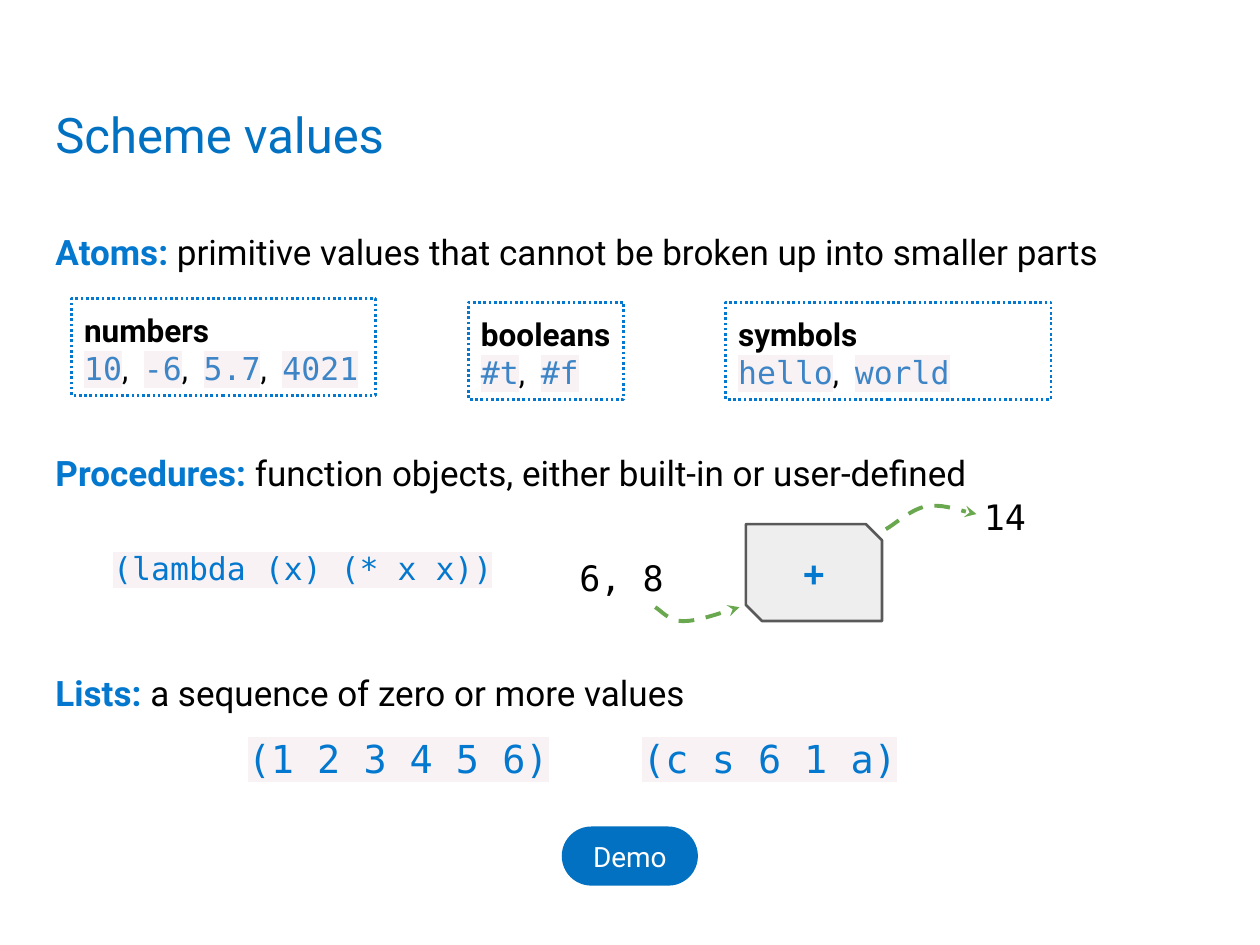
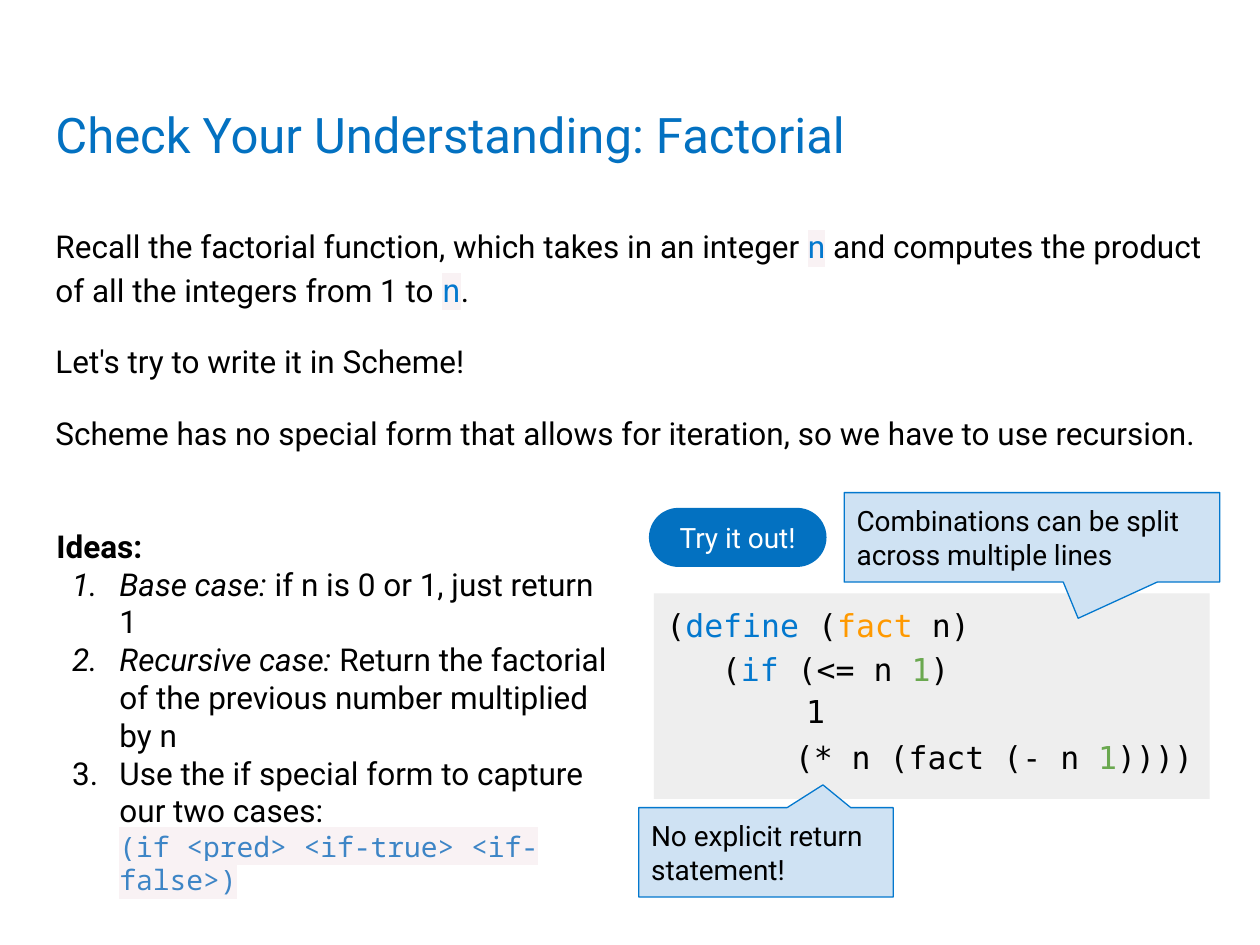
from dataclasses import dataclass, replace

from lxml import etree
from pptx import Presentation
from pptx.dml.color import RGBColor
from pptx.enum import dml, shapes, text
from pptx.oxml.ns import qn
from pptx.util import Pt

LEFT, CENTER = text.PP_ALIGN.LEFT, text.PP_ALIGN.CENTER
TOP, MIDDLE = text.MSO_ANCHOR.TOP, text.MSO_ANCHOR.MIDDLE
SHAPE = shapes.MSO_SHAPE


@dataclass(frozen=True)
class Style:
    """The look of one run."""
    size: float
    color: str = "000000"
    font: str = "Roboto"
    bold: bool = False
    italic: bool = False
    highlight: str = ""


class Theme:
    """Colours, type sizes and run styles of the deck."""
    title_blue, blue, soft_blue = "0371C1", "0378CE", "3D85C6"
    green, orange, white = "6AA84F", "FF9900", "FFFFFF"
    panel, outline, callout, code_back = "EEEEEE", "595959", "CFE2F3", "F9F2F4"
    mono = "DejaVu Sans Mono"
    title = Style(28, title_blue)
    lead = Style(20)
    term = Style(20, blue, bold=True)
    plain = Style(18)
    strong = Style(18, bold=True)
    slanted = Style(18, italic=True)
    note = Style(16)
    button = Style(16, white)
    inline = Style(18, blue, highlight=code_back)
    marked = replace(inline, font=mono)
    value = replace(marked, color=soft_blue)
    form = Style(16, soft_blue, "Noto Sans Mono", highlight=code_back)
    listing = Style(22, blue, mono, highlight=code_back)
    operand = Style(20, font=mono)
    operator = Style(20, blue, mono, bold=True)
    code = Style(18, font=mono)
    keyword = Style(18, blue, mono)
    name = Style(18, orange, mono)
    number = Style(18, green, mono)


def rgb(color):
    """Turn a hex string into a colour."""
    return RGBColor.from_string(color)


def add_run(p, words, style):
    """Append one styled run to a paragraph."""
    r = p.add_run()
    r.text = words
    r.font.size = Pt(style.size)
    r.font.bold, r.font.italic = style.bold, style.italic
    r.font.color.rgb = rgb(style.color)
    if style.highlight:
        mark = etree.SubElement(r.font._element, qn("a:highlight"))
        etree.SubElement(mark, qn("a:srgbClr"), val=style.highlight)
    r.font.name = style.font


def set_bullet(p, numbered):
    """Number a paragraph with a hanging indent, or clear its bullet."""
    pPr = p._p.get_or_add_pPr()
    left, indent = (Pt(36), Pt(-27)) if numbered else (0, 0)
    pPr.set("marL", str(left))
    pPr.set("indent", str(indent))
    if numbered:
        color = etree.SubElement(pPr, qn("a:buClr"))
        etree.SubElement(color, qn("a:srgbClr"), val="000000")
        etree.SubElement(pPr, qn("a:buFont"), typeface="Roboto")
        etree.SubElement(pPr, qn("a:buAutoNum"), type="arabicPeriod")
    else:
        etree.SubElement(pPr, qn("a:buNone"))


def write(sp, paragraphs, anchor=TOP, align=LEFT, spacing=1.0, gap=0, numbered=()):
    """Fill a shape with paragraphs, each a list of (words, style) runs."""
    tf = sp.text_frame
    tf.word_wrap = True
    tf.auto_size = text.MSO_AUTO_SIZE.NONE
    tf.vertical_anchor = anchor
    tf.margin_left = tf.margin_right = tf.margin_top = tf.margin_bottom = Pt(7.2)
    for i, runs in enumerate(paragraphs):
        p = tf.paragraphs[0] if i == 0 else tf.add_paragraph()
        p.alignment = align
        p.line_spacing = spacing
        p.space_before, p.space_after = Pt(gap if i else 0), Pt(0)
        set_bullet(p, i in numbered)
        for words, style in runs:
            if words == "\n":
                p.add_line_break()
            else:
                add_run(p, words, style)
    return sp


def place(sp, box):
    """Move and size a shape, in points."""
    sp.left, sp.top, sp.width, sp.height = map(Pt, box)
    return sp


def add_slide(prs, layout, title):
    """Add a slide with the shared title."""
    s = prs.slides.add_slide(prs.slide_layouts[layout])
    place(s.shapes.title, (24.5, 46.8, 671, 59.8))
    write(s.shapes.title, [[(title, Theme.title)]], MIDDLE)
    return s


def add_text(s, box, *runs, anchor=TOP):
    """Add a one-paragraph text box."""
    return write(s.shapes.add_textbox(*map(Pt, box)), [runs], anchor)


def add_block(s, kind, box, fill=None, line=None, width=1.5, adjust=()):
    """Add a flat preset shape."""
    sp = s.shapes.add_shape(kind, *map(Pt, box))
    sp.shadow.inherit = False
    for i, amount in enumerate(adjust):
        sp.adjustments[i] = amount
    if fill:
        sp.fill.solid()
        sp.fill.fore_color.rgb = rgb(fill)
    else:
        sp.fill.background()
    if line:
        sp.line.color.rgb = rgb(line)
        sp.line.width = Pt(width)
    else:
        sp.line.fill.background()
    return sp


def add_button(s, box, label):
    """Add a pill-shaped button."""
    sp = add_block(s, SHAPE.ROUNDED_RECTANGLE, box, Theme.title_blue, adjust=[0.5])
    write(sp, [[(label, Theme.button)]], MIDDLE, CENTER)


def add_callout(s, box, words, pointer):
    """Add a square-cornered callout with its tip at the pointer."""
    sp = add_block(s, SHAPE.ROUNDED_RECTANGULAR_CALLOUT, box, Theme.callout,
                   Theme.blue, 0.75, [*pointer, 0])
    write(sp, [[(words, Theme.note)]], MIDDLE)


def add_atom_box(s, box, kind, values):
    """Add a dotted box with a kind of atom and its examples."""
    runs = [(values[0], Theme.value)]
    for value in values[1:]:
        runs += [(",  ", Theme.plain), (value, Theme.value)]
    sp = add_block(s, SHAPE.RECTANGLE, box, line=Theme.blue)
    sp.line.dash_style = dml.MSO_LINE.ROUND_DOT
    write(sp, [[(kind, Theme.strong)], runs])


def add_curved_arrow(s, points):
    """Draw a dashed Bezier arrow from a start and triples of control points."""
    start, *rest = [tuple(map(Pt, point)) for point in points]
    builder = s.shapes.build_freeform(*start)
    builder.add_line_segments(rest, close=False)
    sp = builder.convert_to_shape()
    segments = list(sp._element.iter(qn("a:lnTo")))
    outline = segments[0].getparent()
    for i in range(0, len(segments), 3):
        curve = etree.SubElement(outline, qn("a:cubicBezTo"))
        for segment in segments[i:i + 3]:
            curve.append(segment[0])
            outline.remove(segment)
    sp.shadow.inherit = False
    sp.fill.background()
    sp.line.color.rgb = rgb(Theme.green)
    sp.line.width = Pt(2.25)
    sp.line.dash_style = dml.MSO_LINE.DASH
    etree.SubElement(sp.line._get_or_add_ln(), qn("a:tailEnd"), type="stealth")


def build_values(prs):
    """Build the slide on Scheme values."""
    s = add_slide(prs, 4, "Scheme values")
    bodies = list(s.placeholders)[1:]
    sections = [
        ("Atoms:", " primitive values that cannot be broken up into smaller parts"),
        ("Procedures:", " function objects, either built-in or user-defined"),
        ("Lists:", " a sequence of zero or more values"),
    ]
    for i, (body, (term, meaning)) in enumerate(zip(bodies, sections)):
        place(body, (24.5, 121 + 126 * i, 671, 40.3))
        write(body, [[(term, Theme.term), (meaning, Theme.lead)]], spacing=1.15)
    for body in bodies[len(sections):]:
        body._element.getparent().remove(body._element)

    add_atom_box(s, (41, 170.6, 173.5, 55.4), "numbers", ["10", "-6", "5.7", "4021"])
    add_atom_box(s, (267.8, 172.8, 88.6, 55.4), "booleans", ["#t", "#f"])
    add_atom_box(s, (414.7, 172.8, 185.8, 55.4), "symbols", ["hello", "world"])

    add_text(s, (57.6, 306.7, 241, 40.3), ("(lambda (x) (* x x))", Theme.marked))
    adder = add_block(s, SHAPE.SNIP_2_DIAG_RECTANGLE, (426.2, 299.5, 77.8, 55.4),
                      Theme.panel, Theme.outline, adjust=[0, 0.167])
    write(adder, [[("+", Theme.operator)]], MIDDLE, CENTER)
    add_text(s, (324, 311, 94.3, 29.5), ("6, 8", Theme.operand))
    add_text(s, (555.1, 275.8, 46, 29.5), ("14", Theme.operand))
    add_curved_arrow(s, [(374.4, 347), (377.3, 348.5), (382.3, 355), (390.2, 355),
                         (398.2, 355), (417.6, 348.5), (422.6, 347)])
    add_curved_arrow(s, [(506.2, 302.4), (510.5, 300.2), (520.6, 290.9), (529.2, 289.4),
                         (537.8, 288), (553, 293), (558, 293.8)])

    add_text(s, (134.6, 412.6, 187.2, 46.8), ("(1 2 3 4 5 6)", Theme.listing))
    add_text(s, (360, 412.6, 214.6, 46.8), ("(c s 6 1 a)", Theme.listing))
    add_button(s, (321, 472.3, 77.8, 33.8), "Demo")


def build_factorial(prs):
    """Build the slide on the factorial exercise."""
    t = Theme
    s = add_slide(prs, 1, "Check Your Understanding: Factorial")
    body = place(s.placeholders[1], (24.5, 119.5, 671, 174.2))
    write(body, [
        [("Recall the factorial function, which takes in an integer ", t.plain),
         ("n", t.inline),
         (" and computes the product of all the integers from 1 to ", t.plain),
         ("n", t.marked), (".", t.plain)],
        [("Let's try to write it in Scheme!", t.plain)],
        [("Scheme has no special form that allows for iteration, "
          "so we have to use recursion.", t.plain)],
    ], spacing=1.15, gap=16)

    ideas = s.shapes.add_textbox(*map(Pt, (25.2, 293.8, 335.5, 218.2)))
    write(ideas, [
        [("Ideas:", t.strong)],
        [("Base case: ", t.slanted), ("if n is 0 or 1, just return 1", t.plain)],
        [("Recursive case: ", t.slanted),
         ("Return the factorial of the previous number multiplied by n", t.plain)],
        [("Use the if special form to capture our two cases:", t.plain),
         ("\n", t.plain), ("(if <pred> <if-true> <if-false>)", t.form)],
    ], numbered=(1, 2, 3))

    panel = add_block(s, SHAPE.RECTANGLE, (373.7, 339.1, 317.5, 117.4), t.panel)
    write(panel, [[("(", t.code), ("define", t.keyword), (" (", t.code),
                   ("fact", t.name), (" n)", t.code)]])
    add_callout(s, (482.4, 281.5, 214.6, 51.1),
                "Combinations can be split across multiple lines", (0.123, 0.905))
    add_text(s, (405.4, 364.3, 183.6, 34.6), ("(", t.code), ("if", t.keyword),
             (" (<= n ", t.code), ("1", t.number), (")", t.code))
    add_text(s, (447.1, 414.7, 254.2, 34.6), ("(* n (fact (- n ", t.code),
             ("1", t.number), ("))))", t.code))
    add_text(s, (453.6, 388.8, 31.7, 34.6), ("1", t.code), anchor=MIDDLE)
    add_callout(s, (365, 461.5, 145.4, 51.1), "No explicit return statement!",
                (0.224, -0.755))
    add_button(s, (370.8, 290.2, 101.5, 33.8), "Try it out!")


def main():
    """Build and save the deck."""
    prs = Presentation()
    prs.slide_width, prs.slide_height = Pt(720), Pt(540)
    build_values(prs)
    build_factorial(prs)
    prs.save("out.pptx")


if __name__ == "__main__":
    main()
